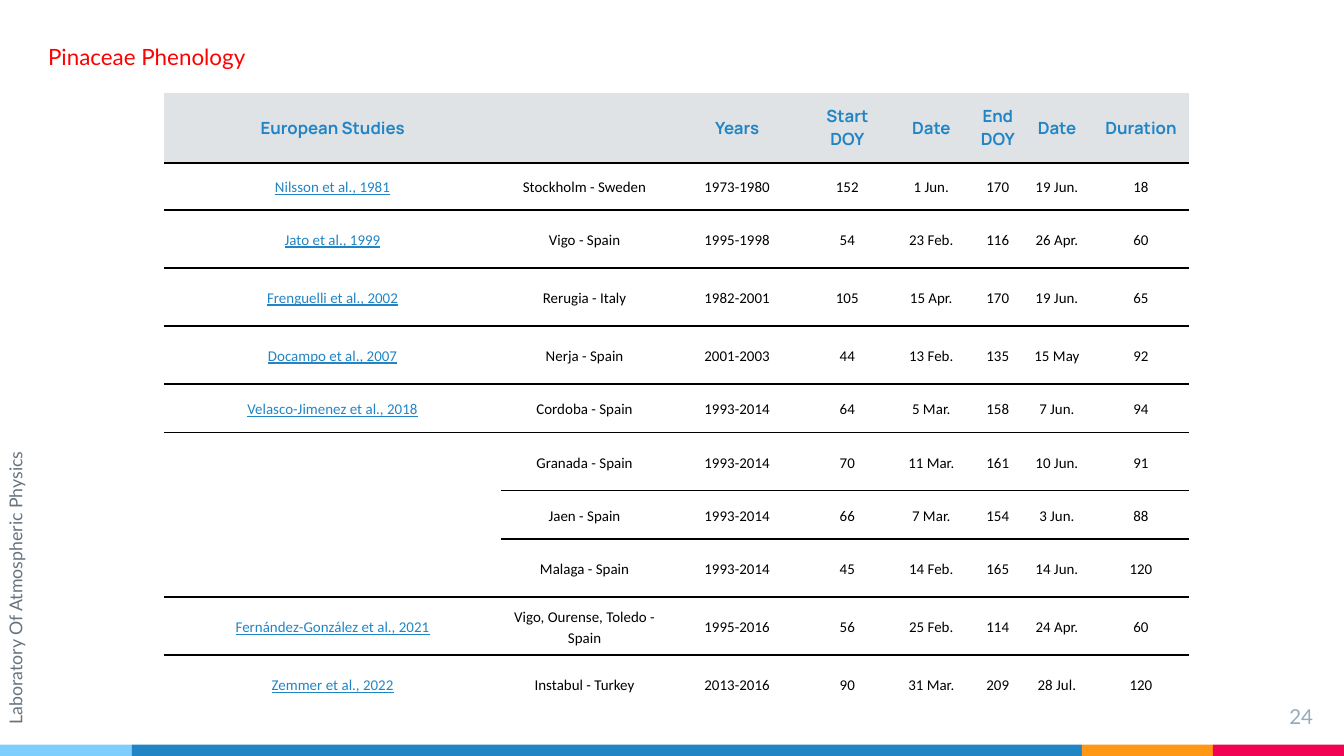
from dataclasses import dataclass
from typing import Optional

from lxml.etree import SubElement
from pptx import Presentation
from pptx.dml.color import RGBColor
from pptx.enum.shapes import MSO_SHAPE as Shape
from pptx.enum.text import MSO_ANCHOR as Anchor, MSO_AUTO_SIZE as AutoSize, PP_ALIGN as Align
from pptx.oxml.ns import qn
from pptx.util import Emu, Inches, Pt

WIDTH, HEIGHT = Inches(10), Inches(5.625)

BLACK = RGBColor(0x00, 0x00, 0x00)
RED = RGBColor(0xFF, 0x00, 0x00)
BLUE = RGBColor(0x21, 0x85, 0xC5)
SKY = RGBColor(0x7E, 0xCE, 0xFD)
ORANGE = RGBColor(0xFF, 0x97, 0x15)
PINK = RGBColor(0xF2, 0x02, 0x53)
HEADER_GREY = RGBColor(0xE0, 0xE3, 0xE6)
LABEL_GREY = RGBColor(0x67, 0x74, 0x80)
NUMBER_GREY = RGBColor(0x97, 0xAB, 0xBC)


@dataclass(frozen=True)
class Frame:
    left: float
    top: float
    width: float
    height: float

    def lengths(self) -> tuple[Emu, Emu, Emu, Emu]:
        return (
            Emu(round(WIDTH * self.left / 100)),
            Emu(round(HEIGHT * self.top / 100)),
            Emu(round(WIDTH * self.width / 100)),
            Emu(round(HEIGHT * self.height / 100)),
        )


@dataclass(frozen=True)
class Bar:
    width: float
    color: RGBColor


@dataclass(frozen=True)
class TextStyle:
    font: str
    size: float
    color: RGBColor
    bold: bool = False
    underline: bool = False


@dataclass(frozen=True)
class Label:
    text: str
    frame: Frame
    style: TextStyle
    align: Align = Align.LEFT
    rotation: int = 0
    vertical_inset: float = 0.1
    wrap: bool = True
    space_before: float = 0
    line_spacing: Optional[float] = None


HEADER_STYLE = TextStyle("Manrope", 9, BLUE, bold=True)
STUDY_STYLE = TextStyle("Calibri", 8, BLUE, underline=True)
BODY_STYLE = TextStyle("Calibri", 8, BLACK)

BARS = [Bar(9.8, SKY), Bar(70.7, BLUE), Bar(9.75, ORANGE), Bar(9.75, PINK)]

LABELS = [
    Label("24", Frame(92.7, 91.4, 6, 6), TextStyle("Lato", 11, NUMBER_GREY), Align.RIGHT),
    Label("Laboratory Of Atmospheric Physics", Frame(-10.2, 73.1, 23.3, 7.45),
          TextStyle("Lato", 9.5, LABEL_GREY), rotation=270, space_before=6),
    Label("Pinaceae Phenology", Frame(2.6, 4.27, 17.1, 5.5), TextStyle("Lato", 12, RED),
          Align.JUSTIFY, vertical_inset=0.05, wrap=False, line_spacing=1.15),
]

TABLE_FRAME = Frame(12.2, 12.25, 76.3, 82.1)
COLUMN_SHARES = [2.51, 1.24, 1.03, 0.61, 0.64, 0.35, 0.53, 0.72]
ROW_SHARES = [0.52, 0.35, 0.43, 0.43, 0.43, 0.36, 0.43, 0.36, 0.43, 0.43, 0.43]
MERGE_FIRST, MERGE_LAST = 6, 8
ROWS = [
    ("European Studies", "", "Years", "Start DOY", "Date", "End DOY", "Date", "Duration"),
    ("Nilsson et al., 1981", "Stockholm - Sweden", "1973-1980", "152", "1 Jun.", "170", "19 Jun.", "18"),
    ("Jato et al., 1999", "Vigo - Spain", "1995-1998", "54", "23 Feb.", "116", "26 Apr.", "60"),
    ("Frenguelli et al., 2002", "Rerugia - Italy", "1982-2001", "105", "15 Apr.", "170", "19 Jun.", "65"),
    ("Docampo et al., 2007", "Nerja - Spain", "2001-2003", "44", "13 Feb.", "135", "15 May", "92"),
    ("Velasco-Jimenez et al., 2018", "Cordoba - Spain", "1993-2014", "64", "5 Mar.", "158", "7 Jun.", "94"),
    ("", "Granada - Spain", "1993-2014", "70", "11 Mar.", "161", "10 Jun.", "91"),
    ("", "Jaen - Spain", "1993-2014", "66", "7 Mar.", "154", "3 Jun.", "88"),
    ("", "Malaga - Spain", "1993-2014", "45", "14 Feb.", "165", "14 Jun.", "120"),
    ("Fernández-González et al., 2021", "Vigo, Ourense, Toledo - Spain", "1995-2016", "56", "25 Feb.", "114",
     "24 Apr.", "60"),
    ("Zemmer et al., 2022", "Instabul - Turkey", "2013-2016", "90", "31 Mar.", "209", "28 Jul.", "120"),
]


def style_runs(paragraph, style: TextStyle) -> None:
    for run in paragraph.runs:
        run.font.name = style.font
        run.font.size = Pt(style.size)
        run.font.bold = style.bold
        run.font.underline = style.underline
        run.font.color.rgb = style.color


def draw_bars(slide, bars: list[Bar]) -> None:
    left = 0.0
    for bar in bars:
        shape = slide.shapes.add_shape(Shape.RECTANGLE, *Frame(left, 98.5, bar.width, 1.5).lengths())
        shape.shadow.inherit = False
        shape.fill.solid()
        shape.fill.fore_color.rgb = bar.color
        shape.line.fill.background()
        left += bar.width


def draw_label(slide, label: Label) -> None:
    shape = slide.shapes.add_textbox(*label.frame.lengths())
    shape.rotation = label.rotation
    text_frame = shape.text_frame
    text_frame.text = label.text
    text_frame.word_wrap = label.wrap
    text_frame.auto_size = AutoSize.NONE if label.wrap else AutoSize.SHAPE_TO_FIT_TEXT
    text_frame.margin_left = text_frame.margin_right = Inches(0.1)
    text_frame.margin_top = text_frame.margin_bottom = Inches(label.vertical_inset)
    paragraph = text_frame.paragraphs[0]
    paragraph.alignment = label.align
    paragraph.space_before = Pt(label.space_before)
    paragraph.line_spacing = label.line_spacing
    style_runs(paragraph, label.style)


def set_borders(cell, top: bool, bottom: bool) -> None:
    properties = cell._tc.get_or_add_tcPr()
    for side, visible in (("L", False), ("R", False), ("T", top), ("B", bottom)):
        line = SubElement(properties, qn(f"a:ln{side}"), w=str(Pt(1)))
        if visible:
            fill = SubElement(line, qn("a:solidFill"))
            SubElement(fill, qn("a:srgbClr"), val=str(BLACK))
        else:
            SubElement(line, qn("a:noFill"))


def has_rule_below(row: int, column: int) -> bool:
    inside_merge = column == 0 and MERGE_FIRST <= row < MERGE_LAST
    return 0 <= row < len(ROWS) - 1 and not inside_merge


def fill_cell(cell, text: str, row: int, column: int) -> None:
    set_borders(cell, has_rule_below(row - 1, column), has_rule_below(row, column))
    cell.margin_left = cell.margin_right = Inches(0.03)
    cell.margin_top = cell.margin_bottom = 0
    cell.vertical_anchor = Anchor.MIDDLE
    if row == 0:
        cell.fill.solid()
        cell.fill.fore_color.rgb = HEADER_GREY
        style = HEADER_STYLE
    else:
        cell.fill.background()
        style = STUDY_STYLE if column == 0 else BODY_STYLE
    cell.text_frame.text = text
    paragraph = cell.text_frame.paragraphs[0]
    paragraph.alignment = Align.CENTER
    paragraph.line_spacing = 1.15 if row else 1.0
    style_runs(paragraph, style)


def draw_table(slide) -> None:
    left, top, width, height = TABLE_FRAME.lengths()
    table = slide.shapes.add_table(len(ROWS), len(COLUMN_SHARES), left, top, width, height).table
    table.first_row = False
    table.horz_banding = False
    for column, share in zip(table.columns, COLUMN_SHARES):
        column.width = Emu(round(width * share / sum(COLUMN_SHARES)))
    for row, share in zip(table.rows, ROW_SHARES):
        row.height = Emu(round(height * share / sum(ROW_SHARES)))
    for row_index, texts in enumerate(ROWS):
        for column_index, text in enumerate(texts):
            fill_cell(table.cell(row_index, column_index), text, row_index, column_index)
    table.cell(MERGE_FIRST, 0).merge(table.cell(MERGE_LAST, 0))


def main() -> None:
    presentation = Presentation()
    presentation.slide_width, presentation.slide_height = WIDTH, HEIGHT
    slide = presentation.slides.add_slide(presentation.slide_layouts[6])
    draw_bars(slide, BARS)
    for label in LABELS:
        draw_label(slide, label)
    draw_table(slide)
    presentation.save("out.pptx")


if __name__ == "__main__":
    main()
